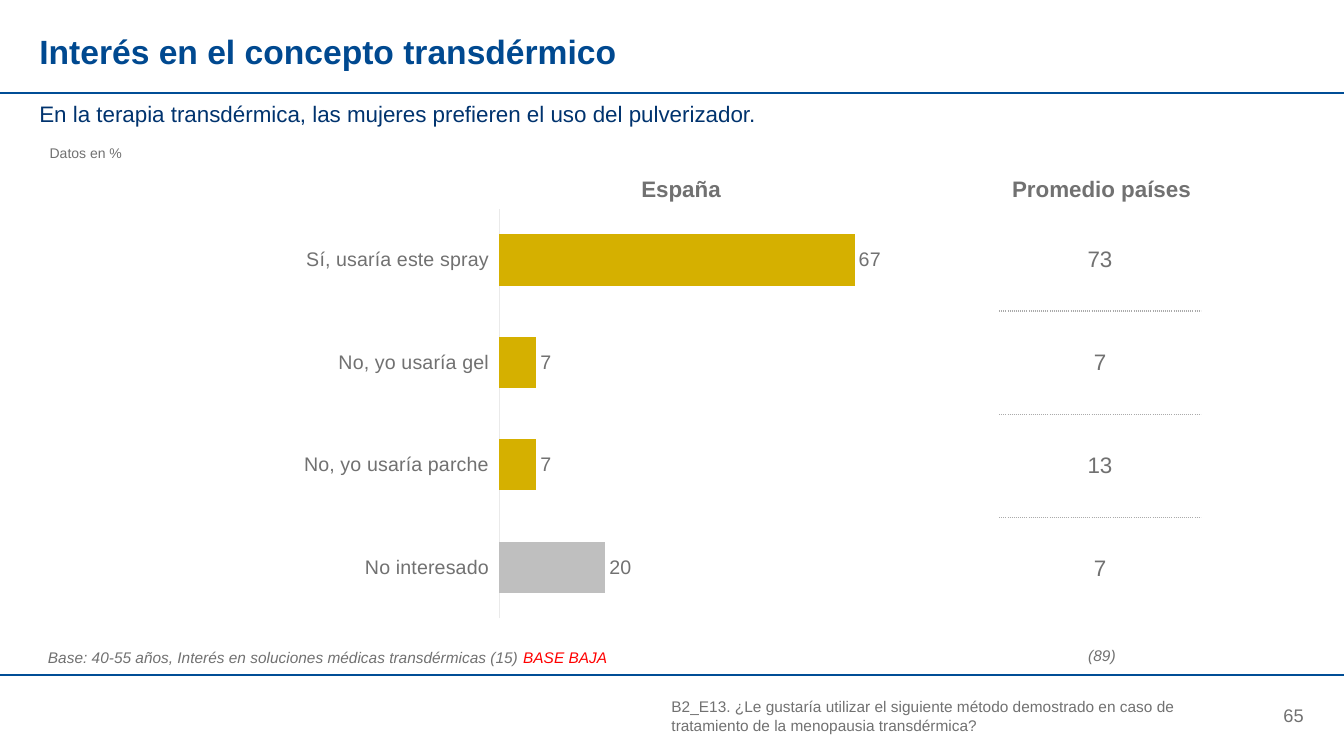
from lxml import etree
from pptx import Presentation
from pptx.chart.data import CategoryChartData
from pptx.dml.color import RGBColor
from pptx.enum.chart import XL_CHART_TYPE, XL_LABEL_POSITION, XL_TICK_LABEL_POSITION, XL_TICK_MARK
from pptx.enum.shapes import MSO_CONNECTOR
from pptx.enum.text import MSO_ANCHOR, PP_ALIGN
from pptx.oxml import parse_xml
from pptx.oxml.ns import nsdecls, qn
from pptx.util import Inches, Pt

# Content
W, H = 13.33, 7.5
FONT, GREY, BLUE, GOLD, SILVER = "Arial", "717171", "004D96", "D5B000", "BFBFBF"
RULES = [0.92, 6.7]
ANSWERS = [  # answer, Spain, average of countries, bar colour
    ("Sí, usaría este spray", 67, 73, GOLD),
    ("No, yo usaría gel", 7, 7, GOLD),
    ("No, yo usaría parche", 7, 13, GOLD),
    ("No interesado", 20, 7, SILVER),
]
CHART_BOX = (2.08, 1.92, 9, 4.37)
PLOT = {"x": 0.319, "y": 0.035, "w": 0.468, "h": 0.93}
TABLE_BOX = (9.91, 2.06, 2, 4.1)

LEFT, CENTER, RIGHT = PP_ALIGN.LEFT, PP_ALIGN.CENTER, PP_ALIGN.RIGHT
TOP, MIDDLE, BOTTOM = MSO_ANCHOR.TOP, MSO_ANCHOR.MIDDLE, MSO_ANCHOR.BOTTOM
HEADING = {"size": 16, "bold": True}
NOTE = {"size": 11, "italic": True}
TEXTS = [  # box, alignment, anchor, inset, format, runs (text, colour)
    ((0.39, 0.31, 12.54, 0.44), LEFT, TOP, 0, {"size": 24, "bold": True},
     [("Interés en el concepto transdérmico", "004990")]),
    ((0.39, 0.99, 12.55, 0.43), LEFT, TOP, 0, {"size": 16},
     [("En la terapia transdérmica, las mujeres prefieren el uso del pulverizador.", "00336E")]),
    ((0.39, 1.43, 0.92, 0.17), CENTER, TOP, 0, {"size": 10}, [("Datos en %", GREY)]),
    ((5.66, 1.67, 2.19, 0.38), CENTER, BOTTOM, 0.05, HEADING, [("España", GREY)]),
    ((9.83, 1.67, 2.19, 0.38), CENTER, BOTTOM, 0.05, HEADING, [("Promedio países", GREY)]),
    ((0.41, 6.43, 5.68, 0.19), CENTER, TOP, 0, NOTE,
     [("Base: 40-55 años, Interés en soluciones médicas transdérmicas (15) ", GREY),
      ("BASE BAJA", "FF0000")]),
    ((9.93, 6.41, 2, 0.19), CENTER, TOP, 0, NOTE, [("(89)", GREY)]),
    ((6.66, 6.99, 5.11, 0.22), LEFT, MIDDLE, 0, {"size": 11},
     [("B2_E13. ¿Le gustaría utilizar el siguiente método demostrado en caso de "
       "tratamiento de la menopausia transdérmica?", GREY)]),
    ((11.87, 6.99, 1.06, 0.22), RIGHT, MIDDLE, 0, {"size": 13}, [("65", GREY)]),
]


def rgb(value):
    return RGBColor.from_string(value)


def box(lengths):
    return [Inches(v) for v in lengths]


def style(font, color, fmt):
    font.name = FONT
    font.color.rgb = rgb(color)
    for key, value in fmt.items():
        setattr(font, key, Pt(value) if key == "size" else value)


def add_text(slide, at, align, anchor, inset, fmt, runs):
    tf = slide.shapes.add_textbox(*box(at)).text_frame
    tf.word_wrap = True
    tf.vertical_anchor = anchor
    for side in ("left", "top", "right", "bottom"):
        setattr(tf, f"margin_{side}", Inches(inset))
    p = tf.paragraphs[0]
    p.alignment = align
    for text, color in runs:
        r = p.add_run()
        r.text = text
        style(r.font, color, fmt)


def add_rule(slide, y):
    line = slide.shapes.add_connector(MSO_CONNECTOR.STRAIGHT, *box((0, y, W, y)))
    line.line.color.rgb = rgb(BLUE)
    line.line.width = Pt(1.5)
    etree.SubElement(line._element.spPr, qn("a:effectLst"))


def add_bars(slide):
    data = CategoryChartData()
    data.categories = [a[0] for a in ANSWERS]
    data.add_series("España", [a[1] for a in ANSWERS])
    chart = slide.shapes.add_chart(XL_CHART_TYPE.BAR_CLUSTERED, *box(CHART_BOX), data).chart
    chart.has_legend = chart.has_title = False
    style(chart.font, GREY, {"size": 14})

    cat, val = chart.category_axis, chart.value_axis
    cat.reverse_order = True
    cat.major_tick_mark = XL_TICK_MARK.NONE
    cat.tick_label_position = XL_TICK_LABEL_POSITION.LOW
    cat.format.line.color.rgb = rgb("EAEAEA")
    cat.format.line.width = Pt(0.75)
    val.minimum_scale, val.maximum_scale = 0, 80
    val.has_major_gridlines = val.visible = False

    plot = chart.plots[0]
    plot.gap_width = 100
    plot.vary_by_categories = False
    plot.has_data_labels = True
    plot.data_labels.show_value = True
    plot.data_labels.position = XL_LABEL_POSITION.OUTSIDE_END
    style(plot.data_labels.font, GREY, {"size": 14})
    series = plot.series[0]
    for target, color in ((series, GOLD), (series.points[len(ANSWERS) - 1], SILVER)):
        target.format.fill.solid()
        target.format.fill.fore_color.rgb = rgb(color)

    # Fixed inner plot area
    area = chart._chartSpace.chart.plotArea
    for old in area.findall(qn("c:layout")):
        area.remove(old)
    modes = '<c:xMode val="edge"/><c:yMode val="edge"/>'
    sizes = "".join(f'<c:{k} val="{v}"/>' for k, v in PLOT.items())
    area.insert(0, parse_xml(
        f'<c:layout {nsdecls("c")}><c:manualLayout><c:layoutTarget val="inner"/>'
        f'{modes}{sizes}</c:manualLayout></c:layout>'))


def set_border(cell, side, dotted):
    if dotted:
        line = '<a:solidFill><a:srgbClr val="AAAAAA"/></a:solidFill><a:prstDash val="sysDot"/>'
    else:
        line = "<a:noFill/>"
    cell._tc.get_or_add_tcPr().append(
        parse_xml(f'<a:{side} {nsdecls("a")} w="12700">{line}</a:{side}>'))


def add_averages(slide):
    last = len(ANSWERS) - 1
    table = slide.shapes.add_table(len(ANSWERS), 1, *box(TABLE_BOX)).table
    table.first_row = table.horz_banding = False
    for i, answer in enumerate(ANSWERS):
        table.rows[i].height = Inches(TABLE_BOX[3] / len(ANSWERS))
        cell = table.cell(i, 0)
        cell.vertical_anchor = MIDDLE
        borders = {"lnL": False, "lnR": False, "lnT": i > 0, "lnB": i < last}
        for side, dotted in borders.items():
            set_border(cell, side, dotted)
        cell.fill.background()
        p = cell.text_frame.paragraphs[0]
        p.alignment = CENTER
        r = p.add_run()
        r.text = str(answer[2])
        style(r.font, GREY, {"size": 16})


def main():
    prs = Presentation()
    prs.slide_width, prs.slide_height = box((W, H))
    slide = prs.slides.add_slide(prs.slide_layouts[6])
    for y in RULES:
        add_rule(slide, y)
    add_bars(slide)
    add_averages(slide)
    for text in TEXTS:
        add_text(slide, *text)
    prs.save("out.pptx")


if __name__ == "__main__":
    main()
